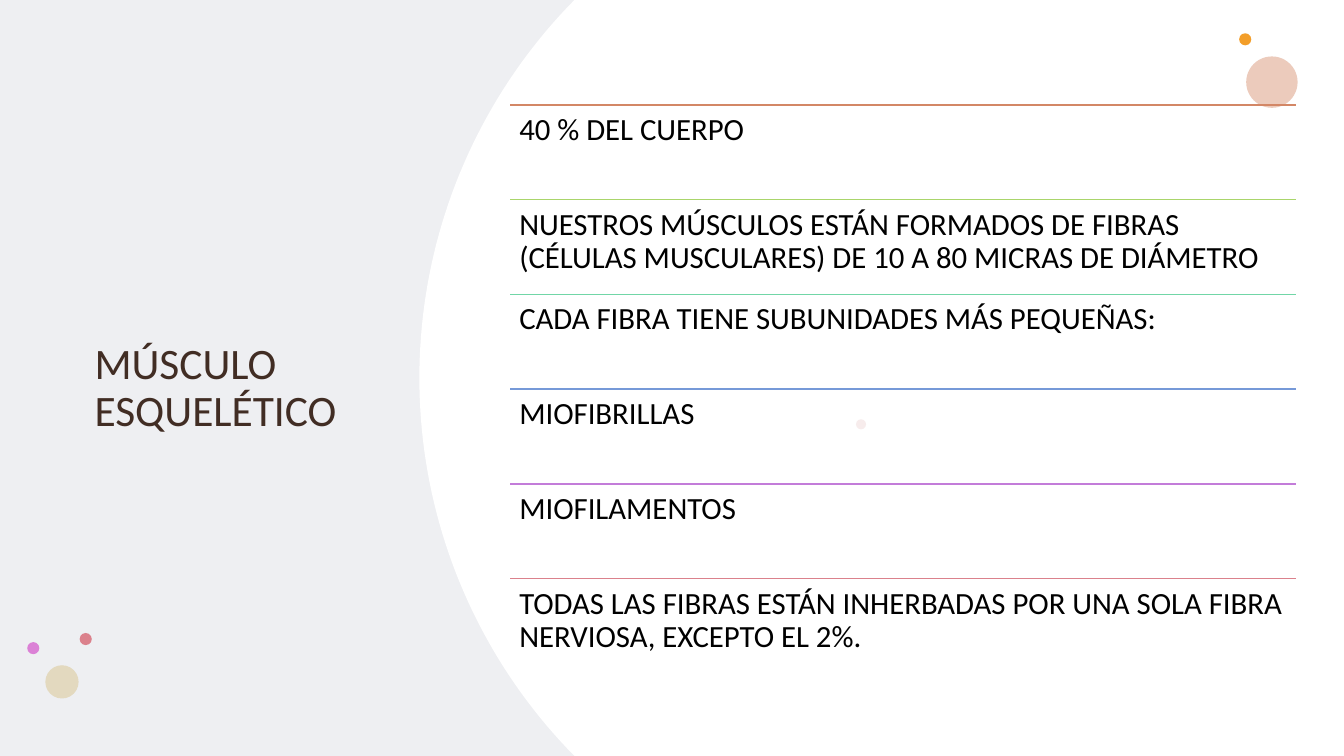
from math import asin, cos, sin

from lxml.etree import SubElement
from pptx import Presentation
from pptx.dml.color import RGBColor
from pptx.enum.shapes import MSO_CONNECTOR as Connector, MSO_SHAPE as Shape
from pptx.enum.text import MSO_ANCHOR as Anchor
from pptx.oxml.ns import qn
from pptx.util import Emu, Pt

PX = 9144  # 100 px to the inch
WIDTH, HEIGHT = 1333, 750


def px(length):
    return Emu(round(length * PX))


def color(hex_code):
    return RGBColor.from_string(hex_code)


class SlideBuilder:
    font = "Calibri"

    def __init__(self, slide):
        self.shapes = slide.shapes

    def paint(self, shape, fill, opacity=100):
        shape.shadow.inherit = False
        shape.fill.solid()
        shape.fill.fore_color.rgb = color(fill)
        shape.line.fill.background()
        if opacity < 100:
            rgb = shape.fill._xPr.find(qn("a:solidFill"))[0]
            SubElement(rgb, qn("a:alpha"), val=str(opacity * 1000))

    def block(self, kind, left, top, width, height, fill, opacity=100):
        shape = self.shapes.add_shape(kind, px(left), px(top), px(width), px(height))
        self.paint(shape, fill, opacity)

    def outline(self, points, fill):
        corners = [(px(x), px(y)) for x, y in points]
        builder = self.shapes.build_freeform(*corners[0], scale=1.0)
        builder.add_line_segments(corners[1:], close=True)
        self.paint(builder.convert_to_shape(), fill)

    def rule(self, left, right, y, stroke):
        line = self.shapes.add_connector(
            Connector.STRAIGHT, px(left), px(y), px(right), px(y))
        line.line.color.rgb = color(stroke)
        line.line.width = Pt(1)
        SubElement(line._element.spPr, qn("a:effectLst"))

    def text(self, words, left, top, width, height, *, size, ink="000000",
             anchor=Anchor.TOP, inset=(9, 9)):
        frame = self.shapes.add_textbox(
            px(left), px(top), px(width), px(height)).text_frame
        frame.word_wrap = True
        frame.vertical_anchor = anchor
        frame.margin_left = frame.margin_right = px(inset[0])
        frame.margin_top = frame.margin_bottom = px(inset[1])
        paragraph = frame.paragraphs[0]
        paragraph.line_spacing = 0.9
        run = paragraph.add_run()
        run.text = words
        run.font.name = self.font
        run.font.size = Pt(size)
        run.font.color.rgb = color(ink)


# Left, top, diameter, fill, opacity
DOTS = [
    (1236, 56, 51, "E5B7A3", 72),
    (1229, 33, 12, "F39E29", 100),
    (849, 416, 10, "E3BEBE", 28),
    (79, 628, 12, "DB818C", 100),
    (45, 660, 33, "E3D9BF", 100),
    (27, 637, 12, "DB81D6", 100),
]

FACTS = [
    ("40 % DEL CUERPO", "D38766"),
    ("NUESTROS MÚSCULOS ESTÁN FORMADOS DE FIBRAS (CÉLULAS MUSCULARES) "
     "DE 10 A 80 MICRAS DE DIÁMETRO", "A9D56B"),
    ("CADA FIBRA TIENE SUBUNIDADES MÁS PEQUEÑAS:", "71D6A7"),
    ("MIOFIBRILLAS", "7699D8"),
    ("MIOFILAMENTOS", "C37CD9"),
    ("TODAS LAS FIBRAS ESTÁN INHERBADAS POR UNA SOLA FIBRA NERVIOSA, "
     "EXCEPTO EL 2%.", "DB818C"),
]
FACT_LEFT, FACT_RIGHT, FACT_TOP, FACT_HEIGHT = 506, 1285, 104, 94


def content_area(center_x=950, radius=534, steps=80):
    """Right part of the slide, bounded on the left by a circular arc."""
    half = HEIGHT / 2
    reach = asin(half / radius)
    angles = [reach * (1 - 2 * step / steps) for step in range(steps + 1)]
    arc = [(center_x - radius * cos(a), half + radius * sin(a)) for a in angles]
    return [(WIDTH, 0), (WIDTH, HEIGHT)] + arc


def main():
    deck = Presentation()
    deck.slide_width, deck.slide_height = px(WIDTH), px(HEIGHT)
    page = SlideBuilder(deck.slides.add_slide(deck.slide_layouts[6]))

    # Background
    page.block(Shape.RECTANGLE, 0, 0, WIDTH, HEIGHT, "C8CCD4", 30)
    page.outline(content_area(), "FFFFFF")

    # Decorative dots
    for left, top, diameter, fill, opacity in DOTS:
        page.block(Shape.OVAL, left, top, diameter, diameter, fill, opacity)

    # Title
    page.text("MÚSCULO ESQUELÉTICO", 84, 104, 313, 564, size=31,
              ink="412D24", anchor=Anchor.MIDDLE, inset=(10, 5))

    # Facts, each under its own rule
    for row, (fact, stroke) in enumerate(FACTS):
        top = FACT_TOP + row * FACT_HEIGHT
        page.rule(FACT_LEFT, FACT_RIGHT, top, stroke)
        page.text(fact, FACT_LEFT, top, FACT_RIGHT - FACT_LEFT, FACT_HEIGHT, size=22)

    deck.save("out.pptx")


if __name__ == "__main__":
    main()
